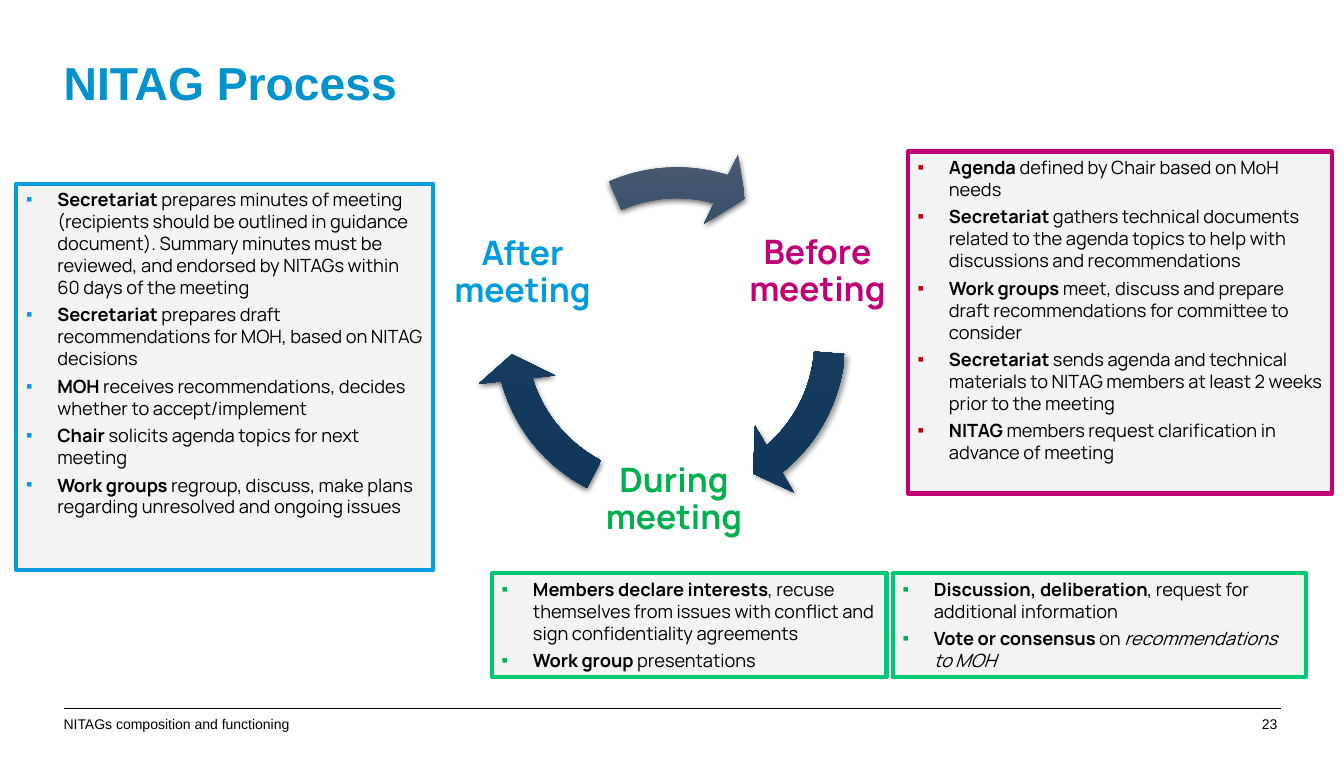
from dataclasses import dataclass
from typing import NamedTuple

from lxml import etree
from pptx import Presentation
from pptx import util as u
from pptx.dml.color import RGBColor
from pptx.enum import shapes, text
from pptx.oxml import parse_xml
from pptx.oxml.ns import nsdecls, qn


@dataclass(frozen=True)
class Theme:
    head: str = "Arial"
    body: str = "Manrope"
    black: str = "000000"
    title: str = "0092CC"
    blue: str = "009CDE"
    pink: str = "C10077"
    red: str = "C00000"
    green: str = "00B050"
    mint: str = "00C871"
    panel: str = "F3F3F3"
    steel: tuple = ("4D5C72", "153C5F", "0F3658")
    big: int = 33
    stage: int = 24
    small: int = 13
    foot: int = 10


class Area(NamedTuple):
    x: float
    y: float
    w: float
    h: float

    def emu(self) -> list:
        return [u.Inches(v) for v in self]


class Item(NamedTuple):
    lead: str
    rest: str
    slant: str = ""


class Panel(NamedTuple):
    area: Area
    edge: str
    dot: str
    items: list


class Stage(NamedTuple):
    label: str
    area: Area
    tint: str


class Glow(NamedTuple):
    alpha: int
    blur: float
    dist: float
    angle: int


class Arrow(NamedTuple):
    area: Area
    end: float
    start: float
    glow: Glow


T = Theme()
LOW = Glow(63, 4.5, 1.5, 90)

PANELS = [
    Panel(Area(0.16, 1.82, 4.13, 3.83), T.blue, T.blue, [
        Item("Secretariat", " prepares minutes of meeting (recipients should be outlined in guidance "
             "document). Summary minutes must be reviewed, and endorsed by NITAGs within "
             "60 days of the meeting"),
        Item("Secretariat", " prepares draft recommendations for MOH, based on NITAG decisions"),
        Item("MOH", " receives recommendations, decides whether to accept/implement"),
        Item("Chair", " solicits agenda topics for next meeting"),
        Item("Work groups", " regroup, discuss, make plans regarding unresolved and ongoing issues"),
    ]),
    Panel(Area(8.99, 1.5, 4.2, 3.39), T.pink, T.red, [
        Item("Agenda", " defined by Chair based on MoH needs"),
        Item("Secretariat", " gathers technical documents related to the agenda topics to help "
             "with discussions and recommendations"),
        Item("Work groups ", "meet, discuss and prepare draft recommendations for committee to consider"),
        Item("Secretariat", " sends agenda and technical materials to NITAG members at least "
             "2 weeks prior to the meeting"),
        Item("NITAG ", "members request clarification in advance of meeting"),
    ]),
    Panel(Area(4.87, 5.68, 3.91, 1.03), T.mint, T.green, [
        Item("Members declare interests", ", recuse themselves from issues with conflict and "
             "sign confidentiality agreements"),
        Item("Work group ", "presentations"),
    ]),
    Panel(Area(8.84, 5.68, 4.09, 1.03), T.mint, T.green, [
        Item("Discussion, deliberation", ", request for additional information"),
        Item("Vote or consensus ", "on ", "recommendations to MOH"),
    ]),
]
STAGES = [
    Stage("Before meeting", Area(7.29, 1.89, 1.61, 1.61), T.pink),
    Stage("During meeting", Area(5.87, 4.15, 1.61, 1.61), T.green),
    Stage("After meeting", Area(4.37, 1.9, 1.61, 1.61), T.blue),
]
ARROWS = [
    Arrow(Area(4.79, 1.47, 3.81, 3.81), 30.18, 2.72, Glow(40, 4, 3, 45)),
    Arrow(Area(4.68, 1.44, 3.81, 3.81), 98.48, 70.46, LOW),
    Arrow(Area(4.8, 1.43, 3.81, 3.81), 171.96, 147.82, LOW),
]


def rgb(code: str) -> RGBColor:
    return RGBColor.from_string(code)


def write(para, words: str, *, size: int, font: str = T.body, tint: str = T.black,
          bold: bool = False, slant: bool = False) -> None:
    run = para.add_run()
    run.text = words
    run.font.name, run.font.size = font, u.Pt(size)
    run.font.bold, run.font.italic = bold, slant
    run.font.color.rgb = rgb(tint)


def setup(frame, pad: float, anchor=text.MSO_ANCHOR.TOP) -> None:
    frame.word_wrap = True
    frame.auto_size = text.MSO_AUTO_SIZE.NONE
    frame.vertical_anchor = anchor
    frame.margin_left = frame.margin_right = u.Inches(pad)
    frame.margin_top = frame.margin_bottom = u.Inches(pad)


def label(slide, words: str, area: Area, *, align=text.PP_ALIGN.LEFT, pad: float = 0,
          anchor=text.MSO_ANCHOR.TOP, space: float = 1, **style) -> None:
    frame = slide.shapes.add_textbox(*area.emu()).text_frame
    setup(frame, pad, anchor)
    para = frame.paragraphs[0]
    para.alignment, para.line_spacing = align, space
    write(para, words, **style)


def bullet(para, tint: str) -> None:
    props = para._p.get_or_add_pPr()
    props.set("marL", str(u.Inches(0.31)))
    props.set("indent", str(u.Inches(-0.31)))
    hue = etree.SubElement(props, qn("a:buClr"))
    etree.SubElement(hue, qn("a:srgbClr"), val=tint)
    etree.SubElement(props, qn("a:buFont"), typeface=T.head)
    etree.SubElement(props, qn("a:buChar"), char="▪")


def draw_panel(slide, panel: Panel) -> None:
    box = slide.shapes.add_shape(shapes.MSO_SHAPE.RECTANGLE, *panel.area.emu())
    box.shadow.inherit = False
    box.fill.solid()
    box.fill.fore_color.rgb = rgb(panel.tint if hasattr(panel, "tint") else T.panel)
    box.line.color.rgb, box.line.width = rgb(panel.edge), u.Pt(3)
    frame = box.text_frame
    setup(frame, 0.1)
    frame.margin_top = frame.margin_bottom = u.Inches(0.05)
    for i, item in enumerate(panel.items):
        para = frame.add_paragraph() if i else frame.paragraphs[0]
        bullet(para, panel.dot)
        para.alignment = text.PP_ALIGN.LEFT
        para.space_before = u.Pt(4 if i else 0)
        write(para, item.lead, size=T.small, bold=True)
        write(para, item.rest, size=T.small)
        if item.slant:
            write(para, item.slant, size=T.small, slant=True)


def draw_arrow(slide, arrow: Arrow) -> None:
    arc = slide.shapes.add_shape(shapes.MSO_SHAPE.CIRCULAR_ARROW, *arrow.area.emu())
    for i, value in enumerate((0.08, 5.76, arrow.end, arrow.start, 0.1)):
        arc.adjustments[i] = value
    arc.line.fill.background()
    arc.shadow.inherit = False
    # Three-stop gradient and soft shadow
    stops = "".join(f'<a:gs pos="{i * 50000}"><a:srgbClr val="{c}"/></a:gs>'
                    for i, c in enumerate(T.steel))
    props = arc._element.spPr
    props.find(qn("a:prstGeom")).addnext(parse_xml(
        f'<a:gradFill {nsdecls("a")} rotWithShape="1"><a:gsLst>{stops}</a:gsLst>'
        '<a:lin ang="5400000" scaled="0"/></a:gradFill>'))
    glow = arrow.glow
    props.find(qn("a:effectLst")).append(parse_xml(
        f'<a:outerShdw {nsdecls("a")} blurRad="{u.Pt(glow.blur)}" dist="{u.Pt(glow.dist)}" '
        f'dir="{glow.angle * 60000}" rotWithShape="0"><a:srgbClr val="{T.black}">'
        f'<a:alpha val="{glow.alpha * 1000}"/></a:srgbClr></a:outerShdw>'))


def draw_frame(slide) -> None:
    # Title
    head = slide.shapes.title
    head.left, head.top, head.width, head.height = Area(0.63, 0.6, 12.02, 0.51).emu()
    setup(head.text_frame, 0)
    para = head.text_frame.paragraphs[0]
    para.alignment, para.line_spacing = text.PP_ALIGN.LEFT, 0.9
    write(para, "NITAG Process", size=T.big, font=T.head, tint=T.title, bold=True)
    # Footer
    rule = slide.shapes.add_connector(shapes.MSO_CONNECTOR.STRAIGHT, *Area(0.63, 7.02, 12.69, 7.02).emu())
    rule.line.color.rgb, rule.line.width = rgb(T.black), u.Pt(0.75)
    etree.SubElement(rule._element.spPr, qn("a:effectLst"))
    label(slide, "NITAGs composition and functioning", Area(0.63, 7.09, 8.27, 0.12),
          size=T.foot, font=T.head)
    label(slide, "23", Area(11.67, 7.09, 0.98, 0.12), align=text.PP_ALIGN.RIGHT,
          size=T.foot, font=T.head)


def main() -> None:
    deck = Presentation()
    deck.slide_width, deck.slide_height = u.Inches(13.31), u.Inches(7.52)
    slide = deck.slides.add_slide(deck.slide_layouts[5])
    draw_frame(slide)
    # Meeting cycle
    for stage, arrow in zip(STAGES, ARROWS):
        label(slide, stage.label, stage.area, align=text.PP_ALIGN.CENTER, pad=0.03, space=0.9,
              anchor=text.MSO_ANCHOR.MIDDLE, size=T.stage, tint=stage.tint, bold=True)
        draw_arrow(slide, arrow)
    # Task panels
    for panel in PANELS:
        draw_panel(slide, panel)
    deck.save("out.pptx")


if __name__ == "__main__":
    main()
